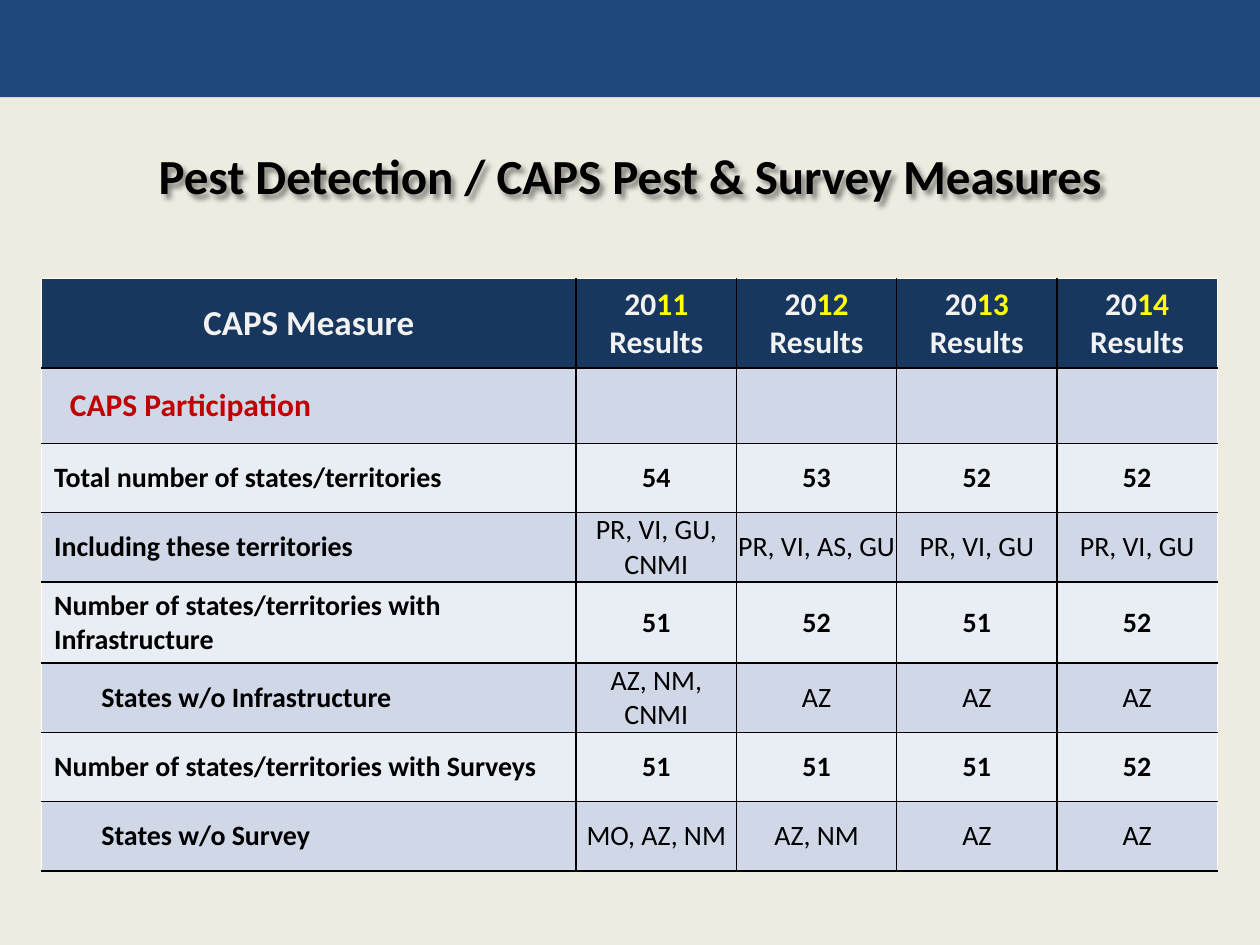
import pptx
import pptx.dml.color
import pptx.enum.shapes
import pptx.enum.text
import pptx.oxml
import pptx.oxml.ns
import pptx.util

Pt = pptx.util.Pt
PP_ALIGN = pptx.enum.text.PP_ALIGN
MIDDLE = pptx.enum.text.MSO_ANCHOR.MIDDLE
FONT = "Calibri"
COLORS = {
    "background": "EEECE1", "banner": "1F497D", "header": "17375E",
    "band_dark": "D0D8E8", "band_light": "E9EDF4", "black": "000000",
    "white": "FFFFFF", "header_text": "F2F2F2", "year": "FFFF00",
    "section": "C00000",
}
YEARS = ["11", "12", "13", "14"]
COL_WIDTHS = [305.5] + [91.6] * len(YEARS)
ROW_HEIGHTS = [36, 43] + [39.6] * 6
# label, left indent, one value per year
ROWS = [
    ("Total number of states/territories", 0, ["54", "53", "52", "52"]),
    ("Including these territories", 0,
     ["PR, VI, GU, CNMI", "PR, VI, AS, GU", "PR, VI, GU", "PR, VI, GU"]),
    ("Number of states/territories with Infrastructure", 0,
     ["51", "52", "51", "52"]),
    ("States w/o Infrastructure", 27, ["AZ, NM, CNMI", "AZ", "AZ", "AZ"]),
    ("Number of states/territories with Surveys", 0,
     ["51", "51", "51", "52"]),
    ("States w/o Survey", 27, ["MO, AZ, NM", "AZ, NM", "AZ", "AZ"]),
]


def rgb(name):
    return pptx.dml.color.RGBColor.from_string(COLORS[name])


def add_run(p, text, size, color="black", bold=True):
    r = p.add_run()
    r.text = text
    r.font.name = FONT
    r.font.size = Pt(size)
    r.font.bold = bold
    r.font.color.rgb = rgb(color)


def add_banner(slide):
    sp = slide.shapes.add_shape(
        pptx.enum.shapes.MSO_SHAPE.RECTANGLE, 0, 0, Pt(720), Pt(55.5))
    sp.shadow.inherit = False
    sp.fill.solid()
    sp.fill.fore_color.rgb = rgb("banner")
    sp.line.fill.background()


def add_title(slide, text):
    title = slide.shapes.title
    title.left, title.top = Pt(36), Pt(72)
    title.width, title.height = Pt(648), Pt(56)
    tf = title.text_frame
    tf.word_wrap = True
    tf.vertical_anchor = MIDDLE
    p = tf.paragraphs[0]
    p.alignment = PP_ALIGN.CENTER
    add_run(p, text, 28)
    title.fill.background()
    title._element.spPr.append(pptx.oxml.parse_xml(
        f'<a:effectLst {pptx.oxml.ns.nsdecls("a")}>'
        '<a:outerShdw blurRad="38100" dist="38100" dir="2700000" algn="tl">'
        f'<a:srgbClr val="{COLORS["black"]}"><a:alpha val="43000"/></a:srgbClr>'
        '</a:outerShdw></a:effectLst>'))


def set_borders(cell, sides):
    """Draw 1 pt borders; sides maps L, R, T, B, in that order, to colours."""
    tc_pr = cell._tc.get_or_add_tcPr()
    for i, (side, color) in enumerate(sides.items()):
        tc_pr.insert(i, pptx.oxml.parse_xml(
            f'<a:ln{side} {pptx.oxml.ns.nsdecls("a")} w="12700">'
            f'<a:solidFill><a:srgbClr val="{COLORS[color]}"/></a:solidFill>'
            f'</a:ln{side}>'))


def format_cells(table):
    last = len(COL_WIDTHS) - 1
    for i in range(len(ROW_HEIGHTS)):
        fill = "header" if i == 0 else "band_dark" if i % 2 else "band_light"
        for j in range(len(COL_WIDTHS)):
            cell = table.cell(i, j)
            cell.vertical_anchor = MIDDLE
            cell.fill.solid()
            cell.fill.fore_color.rgb = rgb(fill)
            set_borders(cell, {
                "L": "white" if j == 0 else "black",
                "R": "white" if j == last else "black",
                "T": "white" if i == 0 else "black",
                "B": "black",
            })


def fill_header(table):
    p = table.cell(0, 0).text_frame.paragraphs[0]
    p.alignment = PP_ALIGN.CENTER
    add_run(p, "CAPS Measure", 20, "header_text")
    for j, year in enumerate(YEARS, 1):
        p = table.cell(0, j).text_frame.paragraphs[0]
        p.alignment = PP_ALIGN.CENTER
        add_run(p, "20", 18, "header_text")
        add_run(p, year + " ", 18, "year")
        add_run(p, "Results", 18, "header_text")


def fill_label(cell, text, indent, size=16, color="black"):
    p = cell.text_frame.paragraphs[0]
    p._p.get_or_add_pPr().set("marL", str(Pt(indent)))
    add_run(p, text, size, color)


def fill_value(cell, text):
    """Counts are bold, lists of states are not."""
    cell.margin_left = cell.margin_right = 0
    cell.margin_top = cell.margin_bottom = 0
    p = cell.text_frame.paragraphs[0]
    p.alignment = PP_ALIGN.CENTER
    add_run(p, text, 16, bold=text.isdigit())


def add_measures_table(slide):
    table = slide.shapes.add_table(
        len(ROW_HEIGHTS), len(COL_WIDTHS), Pt(23.75), Pt(159.25),
        Pt(sum(COL_WIDTHS)), Pt(sum(ROW_HEIGHTS))).table
    for col, width in zip(table.columns, COL_WIDTHS):
        col.width = Pt(width)
    for row, height in zip(table.rows, ROW_HEIGHTS):
        row.height = Pt(height)
    format_cells(table)
    fill_header(table)
    fill_label(table.cell(1, 0), "CAPS Participation", 9, 18, "section")
    for i, (label, indent, values) in enumerate(ROWS, 2):
        fill_label(table.cell(i, 0), label, indent)
        for j, value in enumerate(values, 1):
            fill_value(table.cell(i, j), value)


def main():
    prs = pptx.Presentation()
    prs.slide_width, prs.slide_height = Pt(720), Pt(540)
    slide = prs.slides.add_slide(prs.slide_layouts.get_by_name("Title Only"))
    slide.background.fill.solid()
    slide.background.fill.fore_color.rgb = rgb("background")
    add_banner(slide)
    add_title(slide, "Pest Detection / CAPS Pest & Survey Measures")
    add_measures_table(slide)
    prs.save("out.pptx")


if __name__ == "__main__":
    main()
